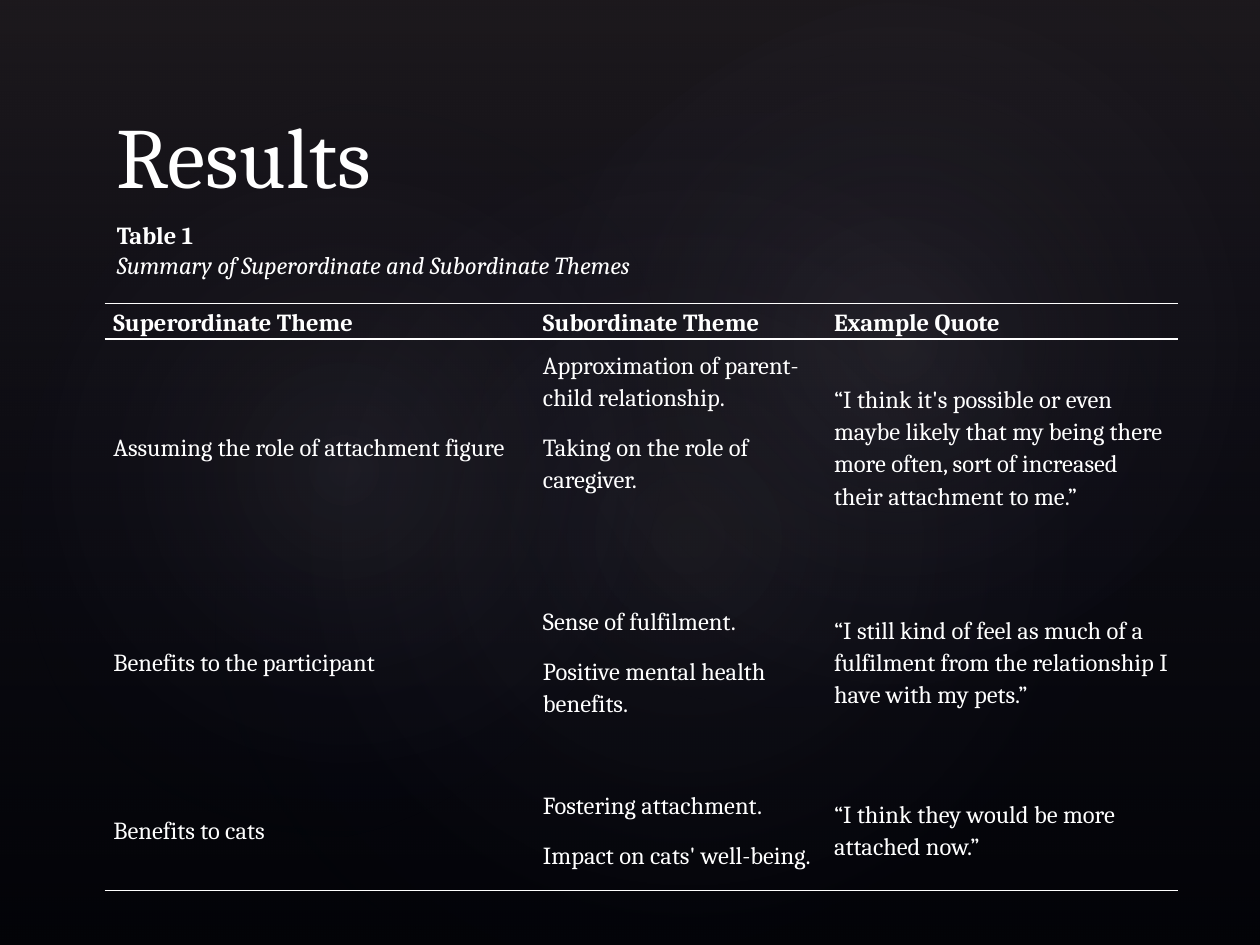
from dataclasses import dataclass

from lxml import etree
from pptx import Presentation
from pptx import util as u
from pptx.dml.color import RGBColor
from pptx.enum import shapes, text
from pptx.oxml import ns

WHITE = RGBColor(0xFF, 0xFF, 0xFF)
BLACK = RGBColor(0x00, 0x00, 0x00)
PLUM = RGBColor(0x50, 0x46, 0x52)
NAVY = RGBColor(0x24, 0x28, 0x52)
MIST = RGBColor(0xC4, 0xBC, 0xC6)

FONT = "Cambria"
SLIDE_WIDTH, SLIDE_HEIGHT = u.Inches(10), u.Inches(7.5)
GRID_COLUMNS, GRID_ROWS = 100, 75
LEFT_EDGE = 8.3
BLANK_LINE = 4  # one empty line with its spacing, in grid units
LINEAR = '<a:lin ang="5400000" scaled="0"/>'
RADIAL = ('<a:path path="circle"><a:fillToRect l="50000" t="50000" '
          'r="50000" b="50000"/></a:path>')


@dataclass(frozen=True)
class Box:
    """A frame in grid units."""
    left: float
    top: float
    width: float
    height: float

    def lengths(self) -> tuple[int, int, int, int]:
        return grid(self.left), grid(self.top), grid(self.width), grid(self.height)


@dataclass(frozen=True)
class Stop:
    position: int
    color: RGBColor
    opacity: int


@dataclass(frozen=True)
class Glow:
    box: Box
    rotation: float
    opacity: int


@dataclass(frozen=True)
class ThemeRow:
    height: float
    cells: tuple[tuple[str, ...], ...]
    header: bool = False
    space_below: float = 0  # extra room under the subordinate themes


GLOWS = (
    Glow(Box(15, 11.4, 79.2, 62.4), 328.7, 7),
    Glow(Box(-3, 12.8, 60.6, 49), 294.3, 8),
    Glow(Box(35.8, 1.3, 70.9, 52), 328.7, 8),
)

THEME_COLUMNS = (34.1, 23.1, 28)
THEME_ROWS = (
    ThemeRow(2.8, (("Superordinate Theme",), ("Subordinate Theme",),
                   ("Example Quote",)), header=True),
    ThemeRow(17.1, (
        ("Assuming the role of attachment figure",),
        ("Approximation of parent-child relationship.",
         "Taking on the role of caregiver."),
        ("“I think it's possible or even maybe likely that my being there more "
         "often, sort of increased their attachment to me.”",)),
        space_below=BLANK_LINE),
    ThemeRow(17, (
        ("Benefits to the participant",),
        ("Sense of fulfilment.", "Positive mental health benefits."),
        ("“I still kind of feel as much of a fulfilment from the relationship "
         "I have with my pets.”",))),
    ThemeRow(9.7, (
        ("Benefits to cats",),
        ("Fostering attachment.", "Impact on cats' well-being."),
        ("“I think they would be more attached now.”",))),
)


def grid(units: float) -> int:
    return round(SLIDE_WIDTH / GRID_COLUMNS * units)


def drawing(tag: str, inner: str, attributes: str = ""):
    return etree.fromstring(
        f'<a:{tag} xmlns:a="{ns.nsuri("a")}" {attributes}>{inner}</a:{tag}>')


def add_gradient(slide, kind, box: Box, stops: tuple[Stop, ...],
                 direction: str, rotation: float = 0) -> None:
    panel = slide.shapes.add_shape(kind, *box.lengths())
    panel.shadow.inherit = False
    panel.rotation = rotation
    panel.line.fill.background()
    panel.fill.background()
    stop_list = "".join(
        f'<a:gs pos="{stop.position * 1000}"><a:srgbClr val="{stop.color}">'
        f'<a:alpha val="{stop.opacity * 1000}"/></a:srgbClr></a:gs>'
        for stop in stops)
    properties = panel._element.spPr
    properties.replace(
        properties.find(ns.qn("a:noFill")),
        drawing("gradFill", f"<a:gsLst>{stop_list}</a:gsLst>{direction}",
                'rotWithShape="1"'))


def style(paragraph, size: float, bold: bool = False, italic: bool = False) -> None:
    font = paragraph.font
    font.name, font.size, font.color.rgb = FONT, u.Pt(size), WHITE
    font.bold, font.italic = bold, italic


def write(frame, lines: tuple[str, ...]):
    frame.word_wrap = True
    frame.text = "\n".join(lines)
    return frame.paragraphs


def set_borders(cell, top: bool, bottom: bool) -> None:
    visible = {"lnL": False, "lnR": False, "lnT": top, "lnB": bottom}
    solid = f'<a:solidFill><a:srgbClr val="{WHITE}"/></a:solidFill>'
    properties = cell._tc.get_or_add_tcPr()
    for index, (edge, shown) in enumerate(visible.items()):
        properties.insert(index, drawing(
            edge, solid if shown else "<a:noFill/>", f'w="{u.Pt(1)}"'))


def fill_cell(cell, lines: tuple[str, ...], bold: bool, space_below: float) -> None:
    cell.fill.background()
    cell.vertical_anchor = text.MSO_ANCHOR.MIDDLE
    cell.margin_left = cell.margin_right = grid(0.7)
    cell.margin_top, cell.margin_bottom = 0, grid(space_below)
    for paragraph in write(cell.text_frame, lines):
        style(paragraph, 14, bold=bold)
        paragraph.line_spacing = 1.15
        paragraph.space_after = u.Pt(10)


def add_themes(slide) -> None:
    box = Box(LEFT_EDGE, 24.1, sum(THEME_COLUMNS),
              sum(row.height for row in THEME_ROWS))
    themes = slide.shapes.add_table(
        len(THEME_ROWS), len(THEME_COLUMNS), *box.lengths()).table
    themes.first_row = themes.horz_banding = False
    for column, width in zip(themes.columns, THEME_COLUMNS):
        column.width = grid(width)
    for index, row in enumerate(THEME_ROWS):
        themes.rows[index].height = grid(row.height)
        for position, lines in enumerate(row.cells):
            cell = themes.cell(index, position)
            fill_cell(cell, lines, row.header,
                      row.space_below if position == 1 else 0)
            # Rules above and below the header, and under the last row
            set_borders(cell, top=index <= 1,
                        bottom=row.header or index == len(THEME_ROWS) - 1)


def main() -> None:
    deck = Presentation()
    deck.slide_width, deck.slide_height = SLIDE_WIDTH, SLIDE_HEIGHT
    slide = deck.slides.add_slide(deck.slide_layouts[6])

    # Dark backdrop with soft glows
    slide.background.fill.solid()
    slide.background.fill.fore_color.rgb = BLACK
    add_gradient(slide, shapes.MSO_SHAPE.RECTANGLE,
                 Box(0, 0, GRID_COLUMNS, GRID_ROWS),
                 (Stop(0, PLUM, 36), Stop(100, NAVY, 10)), LINEAR)
    for glow in GLOWS:
        add_gradient(slide, shapes.MSO_SHAPE.OVAL, glow.box,
                     (Stop(0, MIST, glow.opacity), Stop(58, NAVY, 0)),
                     RADIAL, glow.rotation)

    # Title
    title = slide.shapes.add_textbox(
        *Box(LEFT_EDGE, 6.8, 82.5, 10).lengths()).text_frame
    title.vertical_anchor = text.MSO_ANCHOR.BOTTOM
    style(write(title, ("Results",))[0], 49)

    # Theme table and its caption
    add_themes(slide)
    caption = slide.shapes.add_textbox(
        *Box(LEFT_EDGE, 17, 67.7, 8.8).lengths()).text_frame
    number, heading = write(
        caption, ("Table 1", "Summary of Superordinate and Subordinate Themes"))
    style(number, 14, bold=True)
    style(heading, 14, italic=True)

    deck.save("out.pptx")


if __name__ == "__main__":
    main()
